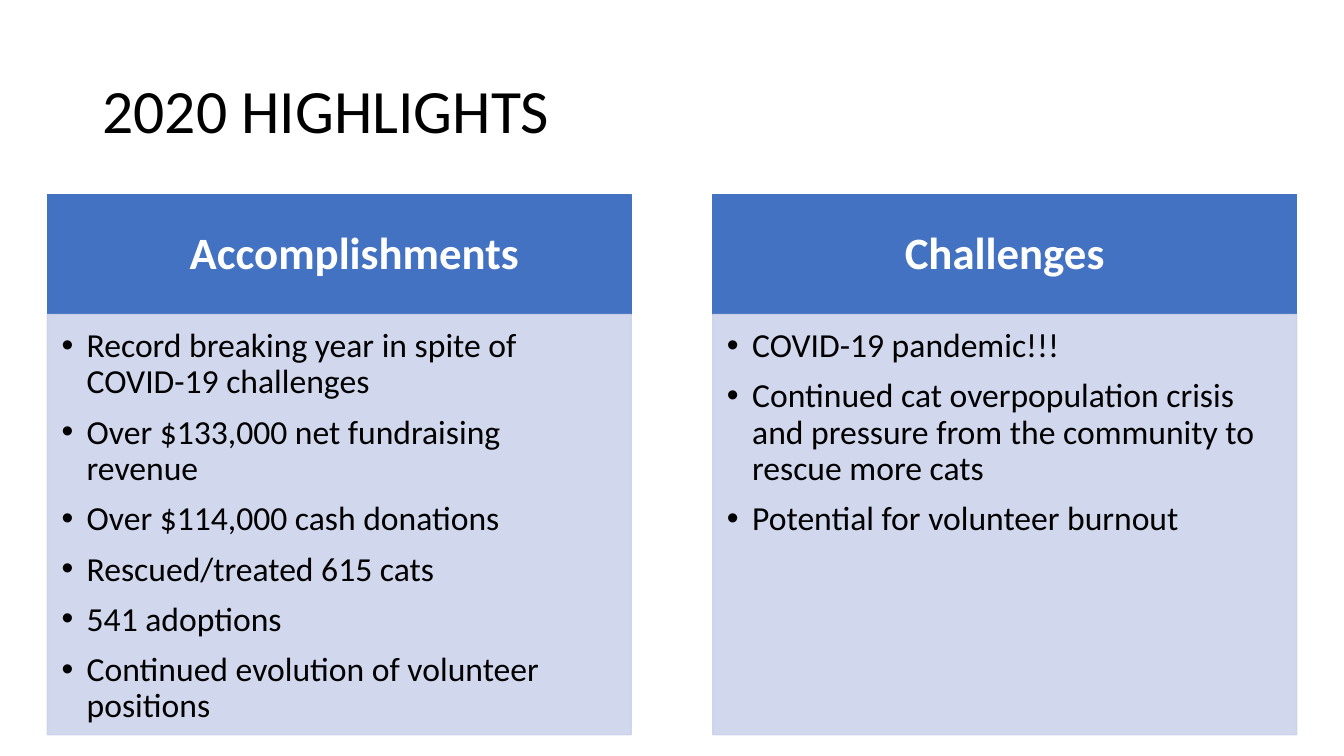
import pptx
import pptx.util
import pptx.dml.color
import pptx.enum.shapes
import pptx.enum.text
import pptx.oxml.ns
import lxml.etree

Inches, Pt = pptx.util.Inches, pptx.util.Pt
RGB = pptx.dml.color.RGBColor
Align = pptx.enum.text.PP_ALIGN
Anchor = pptx.enum.text.MSO_ANCHOR

TITLE = "2020 HIGHLIGHTS"
CARDS = [
    ("Accomplishments", 0.55, [
        "Record breaking year in spite of COVID-19 challenges",
        "Over $133,000 net fundraising revenue",
        "Over $114,000 cash donations",
        "Rescued/treated 615 cats",
        "541 adoptions",
        "Continued evolution of volunteer positions",
    ]),
    ("Challenges", 0.25, [
        "COVID-19 pandemic!!!",
        "Continued cat overpopulation crisis and pressure from the community to rescue more cats",
        "Potential for volunteer burnout",
    ]),
]

BLUE = RGB(0x43, 0x72, 0xC3)
PALE = RGB(0xCC, 0xD3, 0xEA)
BLACK = RGB(0, 0, 0)
WHITE = RGB(255, 255, 255)

WIDE, HIGH = 13.33, 7.5
LEFT, TOP = 0.47, 1.93
CARD, STEP = 5.79, 6.6
HEAD, BODY = 1.19, 4.17


def tag(parent, name, **attrs):
    node = lxml.etree.SubElement(parent, pptx.oxml.ns.qn(name))
    for key, value in attrs.items():
        node.set(key, value)
    return node


def write(shape, lines, size, color=BLACK, bold=False, align=Align.LEFT,
          anchor=Anchor.MIDDLE, inset=(0.1, 0.05, 0.1, 0.05), bullet=False):
    frame = shape.text_frame
    frame.word_wrap = True
    frame.vertical_anchor = anchor
    (frame.margin_left, frame.margin_top,
     frame.margin_right, frame.margin_bottom) = map(Inches, inset)
    for i, line in enumerate(lines):
        para = frame.add_paragraph() if i else frame.paragraphs[0]
        para.text = line
        para.alignment = align
        para.line_spacing = 0.9
        para.space_before = Pt(10 if i else 0)
        if bullet:
            props = para._p.get_or_add_pPr()
            props.set("marL", str(Inches(0.25)))
            props.set("indent", str(-Inches(0.25)))
            tag(props, "a:buFont", typeface="Arial")
            tag(props, "a:buChar", char="•")
        font = para.font
        font.name, font.size, font.bold = "Calibri", Pt(size), bold
        font.color.rgb = color


def panel(slide, box, color, alpha=None):
    rect = slide.shapes.add_shape(
        pptx.enum.shapes.MSO_SHAPE.RECTANGLE, *map(Inches, box))
    rect.shadow.inherit = False
    rect.fill.solid()
    rect.fill.fore_color.rgb = color
    rect.line.color.rgb = color
    rect.line.width = Pt(1)
    if alpha:
        for node in rect._element.spPr.iter(pptx.oxml.ns.qn("a:srgbClr")):
            tag(node, "a:alpha", val=str(alpha * 1000))
    return rect


def main():
    deck = pptx.Presentation()
    deck.slide_width, deck.slide_height = Inches(WIDE), Inches(HIGH)
    slide = deck.slides.add_slide(deck.slide_layouts[6])
    title = slide.shapes.add_textbox(*map(Inches, (0.92, 0.4, 11.5, 1.45)))
    write(title, [TITLE], 44)
    for i, (name, pad, items) in enumerate(CARDS):
        x = LEFT + i * STEP
        head = panel(slide, (x, TOP, CARD, HEAD), BLUE)
        write(head, [name], 32, color=WHITE, bold=True, align=Align.CENTER,
              inset=(pad, 0.14, 0.25, 0.14))
        body = panel(slide, (x, TOP + HEAD, CARD, BODY), PALE, alpha=89)
        write(body, items, 24, anchor=Anchor.TOP,
              inset=(0.14, 0.14, 0.19, 0.21), bullet=True)
    deck.save("out.pptx")


if __name__ == "__main__":
    main()
